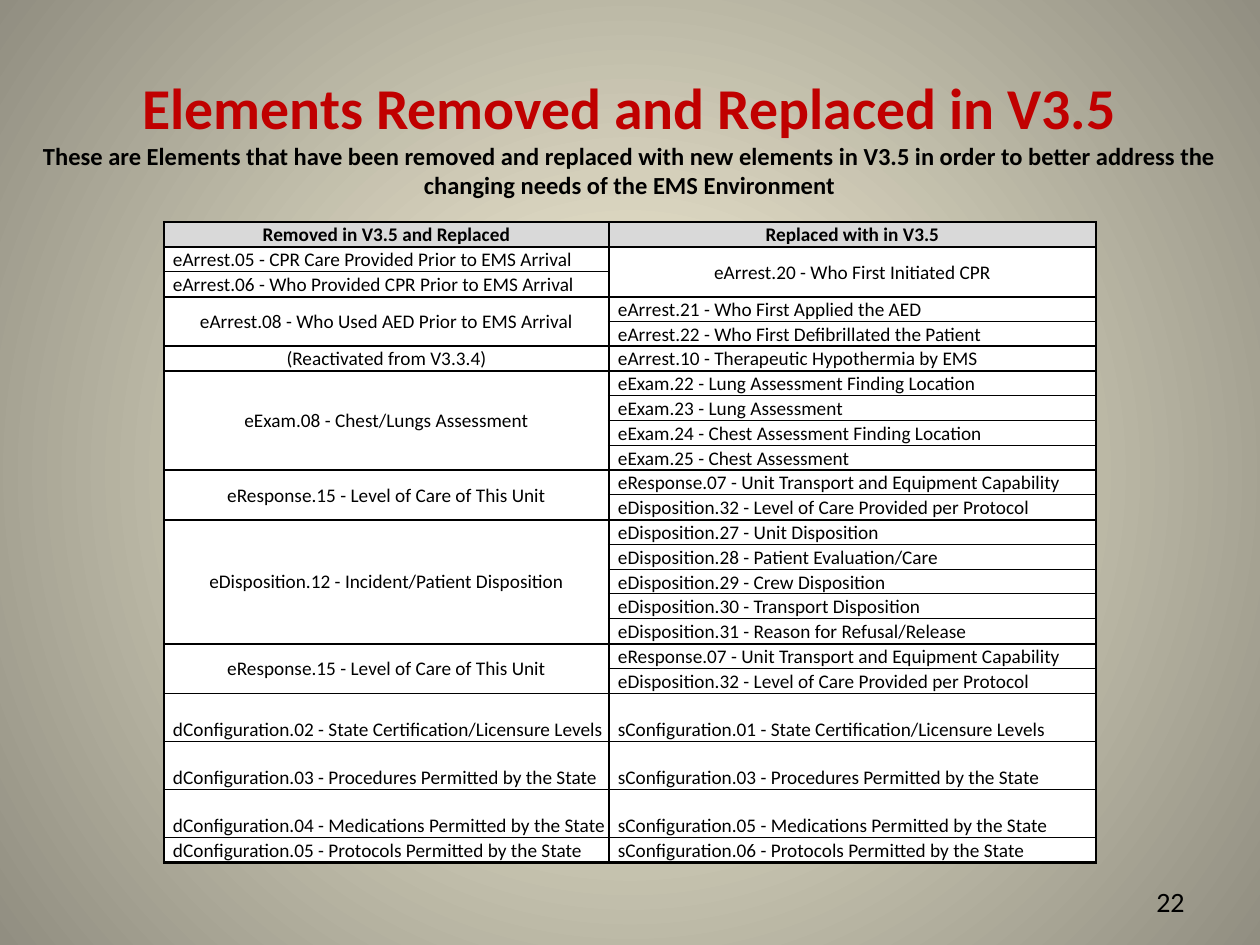
from copy import deepcopy
from typing import NamedTuple

from lxml import etree
from pptx import Presentation
from pptx.dml.color import RGBColor
from pptx.enum.text import MSO_ANCHOR as Anchor, MSO_AUTO_SIZE as AutoSize, PP_ALIGN as Align
from pptx.oxml import parse_xml
from pptx.oxml.ns import nsdecls, qn
from pptx.util import Emu, Pt

PX = 914400 / 126
FONT = "Calibri"
COLORS = {
    "title": "C00000",
    "text": "000000",
    "header": "D9D9D9",
    "cell": "FFFFFF",
    "bg_center": "FCF7DD",
    "bg_edge": "918E81",
}
THIN, THICK = 0.5, 1.5
ROW_COUNT = 23
TALL_ROWS = range(19, 22)
FIRST_BOTTOM_ROW = 13


class Group(NamedTuple):
    removed: list[str]
    replaced: list[str]
    top: float = THICK
    bottom: float = THICK
    centered: bool = True


class Block(NamedTuple):
    text: str
    col: int
    first: int
    last: int
    top: float
    bottom: float
    centered: bool


LEVEL_OF_CARE = Group(
    ["eResponse.15 - Level of Care of This Unit"],
    ["eResponse.07 - Unit Transport and Equipment Capability",
     "eDisposition.32 - Level of Care Provided per Protocol"],
)
GROUPS = [
    Group(["Removed in V3.5 and Replaced"], ["Replaced with in V3.5"]),
    Group(["eArrest.05 - CPR Care Provided Prior to EMS Arrival",
           "eArrest.06 - Who Provided CPR Prior to EMS Arrival"],
          ["eArrest.20 - Who First Initiated CPR"]),
    Group(["eArrest.08 - Who Used AED Prior to EMS Arrival"],
          ["eArrest.21 - Who First Applied the AED",
           "eArrest.22 - Who First Defibrillated the Patient"]),
    Group(["(Reactivated from V3.3.4)"], ["eArrest.10 - Therapeutic Hypothermia by EMS"]),
    Group(["eExam.08 - Chest/Lungs Assessment"],
          ["eExam.22 - Lung Assessment Finding Location",
           "eExam.23 - Lung Assessment",
           "eExam.24 - Chest Assessment Finding Location",
           "eExam.25 - Chest Assessment"]),
    LEVEL_OF_CARE,
    Group(["eDisposition.12 - Incident/Patient Disposition"],
          ["eDisposition.27 - Unit Disposition",
           "eDisposition.28 - Patient Evaluation/Care",
           "eDisposition.29 - Crew Disposition",
           "eDisposition.30 - Transport Disposition",
           "eDisposition.31 - Reason for Refusal/Release"]),
    LEVEL_OF_CARE._replace(bottom=THIN),
    Group(["dConfiguration.02 - State Certification/Licensure Levels",
           "dConfiguration.03 - Procedures Permitted by the State",
           "dConfiguration.04 - Medications Permitted by the State",
           "dConfiguration.05 - Protocols Permitted by the State"],
          ["sConfiguration.01 - State Certification/Licensure Levels",
           "sConfiguration.03 - Procedures Permitted by the State",
           "sConfiguration.05 - Medications Permitted by the State",
           "sConfiguration.06 - Protocols Permitted by the State"],
          top=THIN, centered=False),
]


def px(n: int) -> Emu:
    return Emu(round(n * PX))


def style_font(font, size: int, color: str, bold: bool = False) -> None:
    font.name, font.size, font.bold = FONT, Pt(size), bold
    font.color.rgb = RGBColor.from_string(COLORS[color])


def set_background(s) -> None:
    fill = s.background.fill
    fill.gradient()
    for stop, key in zip(fill.gradient_stops, ("bg_center", "bg_edge")):
        stop.color.rgb = RGBColor.from_string(COLORS[key])
    grad = s.background._cSld.find(".//" + qn("a:gradFill"))
    grad.replace(grad.find(qn("a:lin")), parse_xml(
        f'<a:path {nsdecls("a")} path="circle">'
        '<a:fillToRect l="50000" t="50000" r="50000" b="50000"/></a:path>'))


def add_title(s, heading: str, subtitle: str) -> None:
    sp = s.shapes.title
    sp.left, sp.top, sp.width, sp.height = px(10), px(60), px(1239), px(151)
    tf = sp.text_frame
    tf.word_wrap, tf.auto_size = True, AutoSize.NONE
    tf.vertical_anchor = Anchor.MIDDLE
    p = tf.paragraphs[0]
    p.alignment = Align.CENTER
    r = p.add_run()
    r.text = heading
    style_font(r.font, 33, "title", True)
    p.add_line_break()
    p._p.find(qn("a:br")).append(deepcopy(r._r.rPr))
    r = p.add_run()
    r.text = subtitle
    style_font(r.font, 14, "text", True)


def add_page_number(s, number: str) -> None:
    tf = s.shapes.add_textbox(px(903), px(876), px(294), px(50)).text_frame
    tf.word_wrap, tf.vertical_anchor = True, Anchor.MIDDLE
    p = tf.paragraphs[0]
    p.text, p.alignment = number, Align.RIGHT
    style_font(p.font, 16, "text")


def set_borders(cell, top: float, bottom: float) -> None:
    tcPr = cell._tc.get_or_add_tcPr()
    widths = {"lnL": THICK, "lnR": THICK, "lnT": top, "lnB": bottom}
    for i, (tag, width) in enumerate(widths.items()):
        ln = etree.Element(qn(f"a:{tag}"), w=str(Pt(width)))
        if width:
            fill = etree.SubElement(ln, qn("a:solidFill"))
            etree.SubElement(fill, qn("a:srgbClr"), val=COLORS["text"])
        else:
            etree.SubElement(ln, qn("a:noFill"))
        tcPr.insert(i, ln)


def group_blocks(group: Group, start: int) -> list[Block]:
    height = max(len(group.removed), len(group.replaced))
    blocks = []
    for col, texts in enumerate((group.removed, group.replaced)):
        span = height // len(texts)
        for i, text in enumerate(texts):
            first = start + i * span
            centered = group.centered and (span > 1 or start == 0 or (height == 1 and col == 0))
            blocks.append(Block(
                text, col, first, first + span - 1,
                group.top if i == 0 else THIN,
                group.bottom if i == len(texts) - 1 else THIN,
                centered))
    return blocks


def draw_block(table, b: Block) -> None:
    header = b.first == 0
    for row in range(b.first, b.last + 1):
        cell = table.cell(row, b.col)
        cell.fill.solid()
        cell.fill.fore_color.rgb = RGBColor.from_string(COLORS["header" if header else "cell"])
        set_borders(cell, b.top if row == b.first else 0, b.bottom if row == b.last else 0)
    cell = table.cell(b.first, b.col)
    if b.last > b.first:
        cell.merge(table.cell(b.last, b.col))
    cell.margin_left = px(1 if b.centered else 9)
    cell.margin_top, cell.margin_right, cell.margin_bottom = px(1), px(1), 0
    at_bottom = b.first >= FIRST_BOTTOM_ROW and not b.centered
    cell.vertical_anchor = Anchor.BOTTOM if at_bottom else Anchor.MIDDLE
    p = cell.text_frame.paragraphs[0]
    p.text = b.text
    p.alignment = Align.CENTER if b.centered else Align.LEFT
    style_font(p.font, 11, "text", header)


def add_elements_table(s) -> None:
    table = s.shapes.add_table(ROW_COUNT, 2, px(164), px(222), px(932), px(640)).table
    table.first_row = table.horz_banding = False
    for column, width in zip(table.columns, (445, 487)):
        column.width = px(width)
    for i, row in enumerate(table.rows):
        row.height = px(48 if i in TALL_ROWS else 24 if i % 5 == 4 else 25)
    start = 0
    for group in GROUPS:
        blocks = group_blocks(group, start)
        for block in blocks:
            draw_block(table, block)
        start = blocks[-1].last + 1


def main() -> None:
    prs = Presentation()
    prs.slide_width, prs.slide_height = px(1260), px(945)
    s = prs.slides.add_slide(prs.slide_layouts[5])
    set_background(s)
    add_title(s, "Elements Removed and Replaced in V3.5",
              "These are Elements that have been removed and replaced with new elements in V3.5 "
              "in order to better address the changing needs of the EMS Environment")
    add_page_number(s, "22")
    add_elements_table(s)
    prs.save("out.pptx")


if __name__ == "__main__":
    main()
